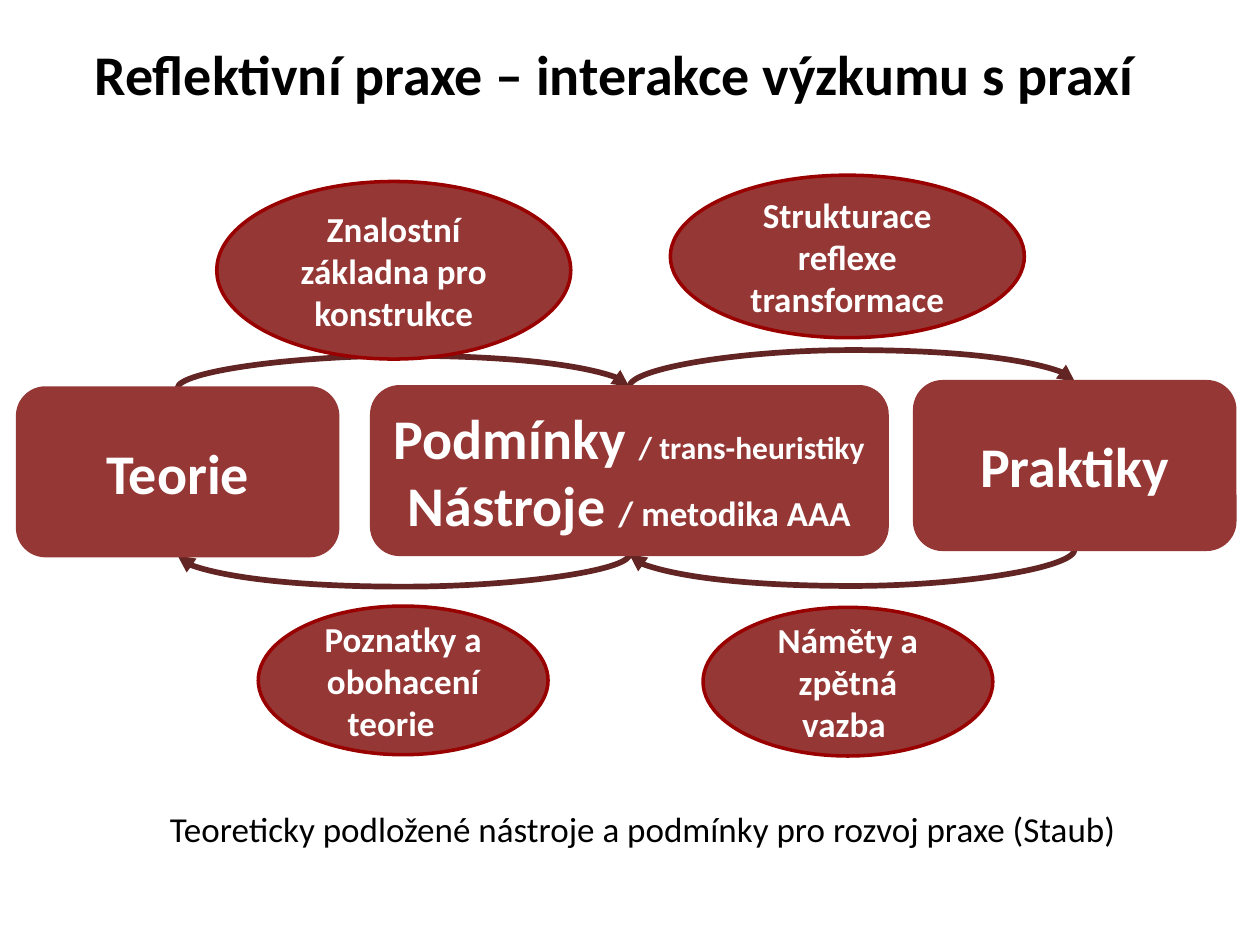
from lxml import etree
from pptx import Presentation
from pptx.dml.color import RGBColor
from pptx.enum.shapes import MSO_CONNECTOR, MSO_SHAPE
from pptx.enum.text import MSO_ANCHOR, MSO_AUTO_SIZE, PP_ALIGN
from pptx.oxml.ns import qn
from pptx.util import Inches, Pt

RED = RGBColor(0x95, 0x37, 0x35)
EDGE = RGBColor(0x99, 0x00, 0x00)
ARROW = RGBColor(0x63, 0x25, 0x23)
WHITE = RGBColor(0xFF, 0xFF, 0xFF)
BLACK = RGBColor(0x00, 0x00, 0x00)


def write(s, *lines, color=BLACK, bold=True, align=PP_ALIGN.CENTER,
          anchor=MSO_ANCHOR.MIDDLE):
    """Write each line, a list of (text, size) runs, as a paragraph."""
    tf = s.text_frame
    tf.word_wrap = True
    tf.auto_size = MSO_AUTO_SIZE.NONE
    tf.vertical_anchor = anchor
    for i, line in enumerate(lines):
        p = tf.add_paragraph() if i else tf.paragraphs[0]
        p.alignment = align
        for text, size in line:
            r = p.add_run()
            r.text = text
            r.font.name = "Calibri"
            r.font.size = Pt(size)
            r.font.bold = bold
            r.font.color.rgb = color


def add_node(kind, x, y, w, h, edge, *lines):
    s = slide.shapes.add_shape(kind, Inches(x), Inches(y), Inches(w), Inches(h))
    s.shadow.inherit = False
    s.fill.solid()
    s.fill.fore_color.rgb = RED
    s.line.color.rgb = edge
    s.line.width = Pt(2)
    write(s, *lines, color=WHITE)
    return s


prs = Presentation()
prs.slide_width, prs.slide_height = Inches(10), Inches(7.5)
slide = prs.slides.add_slide(prs.slide_layouts[5])

# Title
title = slide.shapes.title
title.left, title.top = Inches(0.47), Inches(0.25)
title.width, title.height = Inches(8.91), Inches(0.66)
write(title, [("Reflektivní praxe – interakce výzkumu s praxí ", 32)])

# Caption
caption = slide.shapes.add_textbox(Inches(1.25), Inches(6.36), Inches(7.85), Inches(0.44))
write(caption, [("Teoreticky podložené nástroje a podmínky pro rozvoj praxe (Staub)", 20)],
      bold=False, align=PP_ALIGN.LEFT, anchor=MSO_ANCHOR.TOP)

# Main boxes
box = MSO_SHAPE.ROUNDED_RECTANGLE
tools = add_node(box, 2.95, 3.07, 4.09, 1.33, RED,
                 [("Podmínky ", 32), ("/ trans-heuristiky", 18), (" ", 32)],
                 [("Nástroje ", 32), ("/ metodika AAA", 20)])
practice = add_node(box, 7.26, 3.03, 2.54, 1.33, RED, [("Praktiky", 32)])
theory = add_node(box, 0.14, 3.08, 2.54, 1.33, RED, [("Teorie", 32)])

# Ellipses above and below the boxes
for x, y, w, h, text in [
    (5.58, 4.82, 2.3, 1.18, "Náměty a zpětná vazba "),
    (2.05, 4.81, 2.3, 1.18, "Poznatky a obohacení teorie   "),
    (1.72, 1.44, 2.81, 1.41, "Znalostní základna pro konstrukce"),
    (5.32, 1.39, 2.81, 1.29, "Strukturace reflexe transformace"),
]:
    add_node(MSO_SHAPE.OVAL, x, y, w, h, EDGE, [(text, 20)])

# Curved arrows behind the boxes: side 0 bulges upwards, side 2 downwards
for start, end, side, bulge in [
    (practice, tools, 2, 0.29),
    (tools, theory, 2, 0.26),
    (theory, tools, 0, 0.26),
    (tools, practice, 0, 0.29),
]:
    c = slide.shapes.add_connector(MSO_CONNECTOR.CURVE, 0, 0, 0, 0)
    c.begin_connect(start, side)
    c.end_connect(end, side)
    x1, y1, x2, y2 = c.begin_x, c.begin_y, c.end_x, c.end_y
    w, h = abs(y2 - y1), abs(x2 - x1)  # the frame is turned by 90 degrees
    c.left, c.top = (x1 + x2 - w) // 2, (y1 + y2 - h) // 2
    c.width, c.height = w, h
    xfrm = c._element.spPr.find(qn("a:xfrm"))
    xfrm.set("rot", "5400000")
    for flip in ("flipH", "flipV"):
        xfrm.set(flip, "1" if side == 0 else "0")
    guides = c._element.spPr.find(qn("a:prstGeom")).find(qn("a:avLst"))
    etree.SubElement(guides, qn("a:gd"), name="adj1",
                     fmla=f"val {round(Inches(bulge) / w * 100000)}")
    c.line.color.rgb = ARROW
    c.line.width = Pt(3.25)
    etree.SubElement(c.line._get_or_add_ln(), qn("a:tailEnd"), type="triangle")
    etree.SubElement(c._element.spPr, qn("a:effectLst"))
    tools._element.addprevious(c._element)

prs.save("out.pptx")
